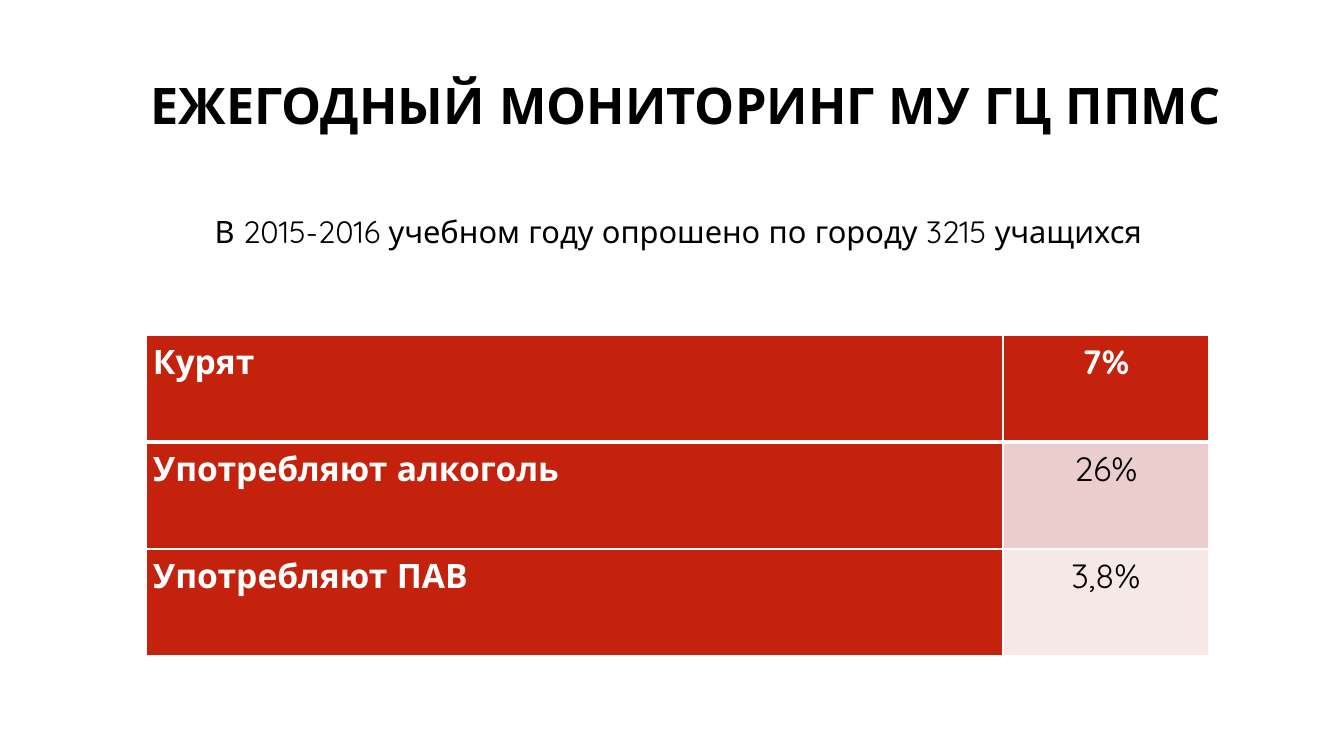
from lxml.etree import SubElement
from pptx import Presentation
from pptx.dml.color import RGBColor
from pptx.enum.text import MSO_ANCHOR, PP_ALIGN
from pptx.oxml.ns import qn
from pptx.util import Emu, Pt

RED, WHITE, BLACK = "C4220D", "FFFFFF", "000000"


def px(num):
    return Emu(round(num * 914400 / 100.8))


def color(code):
    return RGBColor.from_string(code)


def apply(item, look):
    for key, value in look.items():
        setattr(item, key, value)


class Board:
    face = "Quicksand"

    def __init__(self, deck):
        self.slide = deck.slides.add_slide(deck.slide_layouts[6])
        fill = self.slide.background.fill
        fill.solid()
        fill.fore_color.rgb = color(WHITE)

    def text(self, frame, words, size, ink, bold, form):
        para = frame.paragraphs[0]
        apply(para, form)
        run = para.add_run()
        run.text = words
        apply(run.font, {"name": self.face, "size": Pt(size), "bold": bold})
        run.font.color.rgb = color(ink)

    def label(self, box, words, size, bold, anchor, form):
        frame = self.slide.shapes.add_textbox(*map(px, box)).text_frame
        apply(frame, {"word_wrap": True, "vertical_anchor": anchor})
        self.text(frame, words, size, BLACK, bold, form)

    def border(self, cell, sides):
        props = cell._tc.get_or_add_tcPr()
        for side, width in sides.items():
            line = SubElement(props, qn("a:ln" + side), w=str(Pt(width)))
            fill = SubElement(line, qn("a:solidFill"))
            SubElement(fill, qn("a:srgbClr"), val=WHITE)

    def cell(self, cell, words, back, strong, form, sides):
        apply(cell, {"margin_left": px(7), "margin_right": px(7),
                     "margin_top": 0, "margin_bottom": 0})
        self.border(cell, sides)
        cell.fill.solid()
        cell.fill.fore_color.rgb = color(back)
        ink = WHITE if strong else BLACK
        self.text(cell.text_frame, words, 24, ink, strong, form)

    def table(self, left, top, widths, height, rows):
        box = (left, top, sum(widths), height * len(rows))
        grid = self.slide.shapes.add_table(
            len(rows), len(widths), *map(px, box)).table
        for col, width in zip(grid.columns, widths):
            col.width = px(width)
        for i, (name, share, tint) in enumerate(rows):
            grid.rows[i].height = px(height)
            sides = {"L": 1, "R": 1, "T": 3 if i == 1 else 1,
                     "B": 3 if i == 0 else 1}
            parts = ((name, RED, True, PP_ALIGN.LEFT),
                     (share, tint, tint == RED, PP_ALIGN.CENTER))
            for j, (words, back, strong, align) in enumerate(parts):
                form = {"alignment": align, "line_spacing": 1.15}
                self.cell(grid.cell(i, j), words, back, strong, form, sides)


def main():
    deck = Presentation()
    apply(deck, {"slide_width": px(1344), "slide_height": px(756)})
    board = Board(deck)
    board.label((53, 18, 1178, 142), "ЕЖЕГОДНЫЙ МОНИТОРИНГ МУ ГЦ ППМС",
                36, True, MSO_ANCHOR.MIDDLE,
                {"alignment": PP_ALIGN.RIGHT, "line_spacing": 1.5})
    board.label((82, 212, 1193, 485),
                "В 2015-2016 учебном году опрошено по городу 3215 учащихся",
                22, False, MSO_ANCHOR.TOP,
                {"alignment": PP_ALIGN.CENTER, "line_spacing": 0.9})
    board.table(146, 335, (857, 206), 107, (
        ("Курят", "7%", RED),
        ("Употребляют алкоголь", "26%", "EACDCC"),
        ("Употребляют ПАВ", "3,8%", "F5E8E7"),
    ))
    deck.save("out.pptx")


if __name__ == "__main__":
    main()
